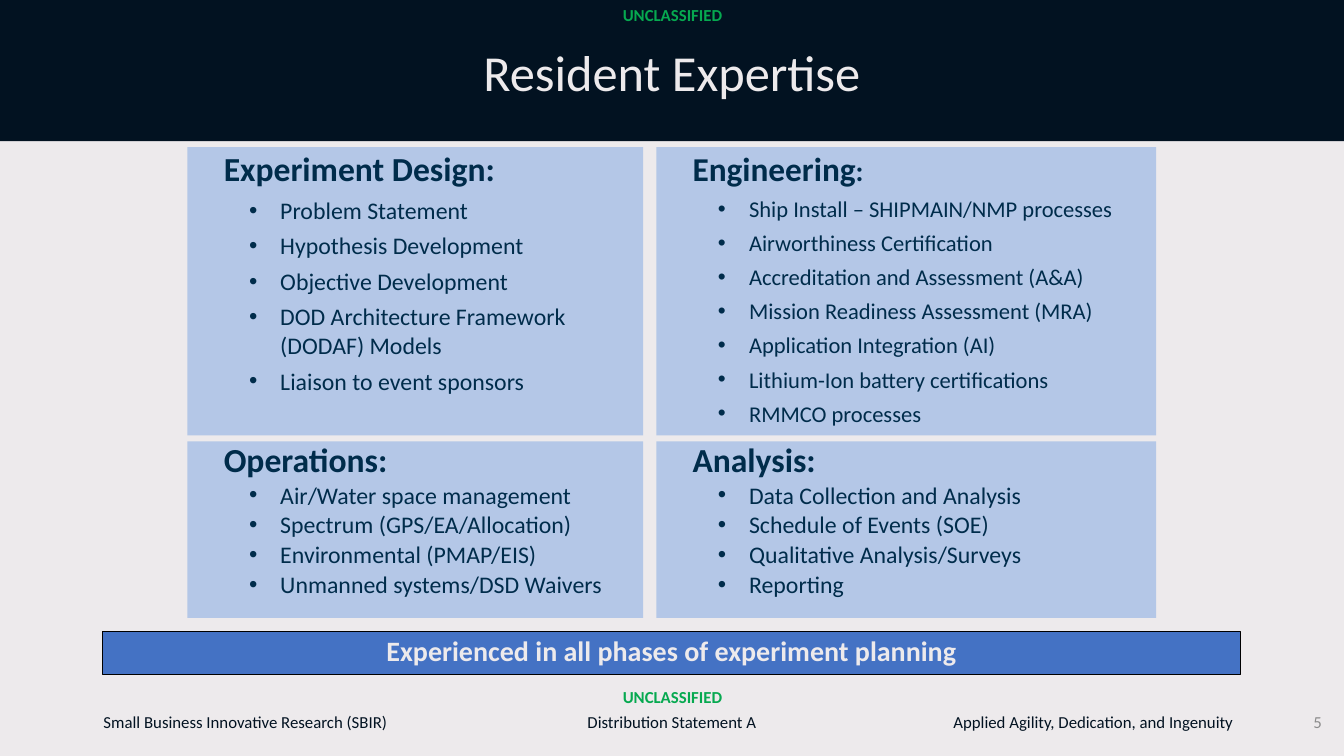
from lxml.etree import SubElement
from pptx import Presentation
from pptx.dml.color import RGBColor
from pptx.enum.shapes import MSO_SHAPE
from pptx.enum.text import MSO_ANCHOR, MSO_AUTO_SIZE, PP_ALIGN
from pptx.oxml.ns import qn
from pptx.util import Inches, Pt

WIDE, HIGH = Inches(13.33), Inches(7.5)
NAVY, PALE, GREEN = "021221", "EDEAEC", "06A950"
INK, PANEL, BLUE, GREY = "002C4B", "B4C7E7", "4472C4", "8C8C8C"
COLS = [(13.95, 33.9), (48.83, 37.2)]
ROWS = [(19.47, 38.13), (58.4, 23.33)]
LISTS = [
    ("Experiment Design:", [
        "Problem Statement",
        "Hypothesis Development",
        "Objective Development",
        "DOD Architecture Framework (DODAF) Models",
        "Liaison to event sponsors"]),
    ("Engineering:", [
        "Ship Install – SHIPMAIN/NMP processes",
        "Airworthiness Certification",
        "Accreditation and Assessment (A&A)",
        "Mission Readiness Assessment (MRA)",
        "Application Integration (AI)",
        "Lithium-Ion battery certifications",
        "RMMCO processes"]),
    ("Operations:", [
        "Air/Water space management",
        "Spectrum (GPS/EA/Allocation)",
        "Environmental (PMAP/EIS)",
        "Unmanned systems/DSD Waivers"]),
    ("Analysis:", [
        "Data Collection and Analysis",
        "Schedule of Events (SOE)",
        "Qualitative Analysis/Surveys",
        "Reporting"]),
]
NOTES = [
    ("UNCLASSIFIED", 31.96, 0, 36.16, GREEN, True, PP_ALIGN.CENTER),
    ("UNCLASSIFIED", 31.96, 90.13, 36.16, GREEN, True, PP_ALIGN.CENTER),
    ("Small Business Innovative Research (SBIR)", 2.7, 93.47, 31.13, NAVY, False, PP_ALIGN.CENTER),
    ("Distribution Statement A", 33.08, 93.47, 33.83, NAVY, False, PP_ALIGN.CENTER),
    ("Applied Agility, Dedication, and Ingenuity", 65.49, 93.47, 31.73, NAVY, False, PP_ALIGN.CENTER),
    ("5", 90.02, 93.47, 9.08, GREY, False, PP_ALIGN.RIGHT),
]


def area(x, y, w, h):
    return [round(part * size / 100) for part, size in zip((x, y, w, h), (WIDE, HIGH) * 2)]


def place(shape, box):
    shape.left, shape.top, shape.width, shape.height = area(*box)


def paint(fill, color):
    fill.solid()
    fill.fore_color.rgb = RGBColor.from_string(color)


def style(para, size, color, bold=False):
    font = para.font
    font.name, font.size, font.bold = "Calibri", Pt(size), bold
    font.color.rgb = RGBColor.from_string(color)


def bullet(para, mark):
    props = para._p.get_or_add_pPr()
    left, hang = (0.82, -0.31) if mark else (0.26, 0)
    props.set("marL", str(Inches(left)))
    props.set("indent", str(Inches(hang)))
    if mark:
        SubElement(props, qn("a:buFont"), typeface="Arial")
        SubElement(props, qn("a:buChar"), char="•")
    else:
        SubElement(props, qn("a:buNone"))


def block(slide, box, color):
    shape = slide.shapes.add_shape(MSO_SHAPE.RECTANGLE, *area(*box))
    shape.shadow.inherit = False
    paint(shape.fill, color)
    shape.line.fill.background()
    return shape


def label(frame, text, size, color, bold=False, align=PP_ALIGN.CENTER, anchor=MSO_ANCHOR.MIDDLE):
    frame.word_wrap = True
    frame.auto_size = MSO_AUTO_SIZE.NONE
    frame.vertical_anchor = anchor
    para = frame.paragraphs[0]
    para.text, para.alignment = text, align
    style(para, size, color, bold)
    return para


def panel(shape, box, head, items, sizes, tight):
    place(shape, box)
    paint(shape.fill, PANEL)
    frame = shape.text_frame
    para = label(frame, head, sizes[0], INK, True, PP_ALIGN.LEFT, MSO_ANCHOR.TOP)
    bullet(para, False)
    para.line_spacing, para.space_before = 0.8 if tight else 0.9, Pt(0)
    for item in items:
        para = frame.add_paragraph()
        para.text, para.level = item, 1
        bullet(para, True)
        para.line_spacing, para.space_before = 0.8 if tight else 1.0, Pt(5)
        style(para, sizes[1], INK)


def main():
    deck = Presentation()
    deck.slide_width, deck.slide_height = WIDE, HIGH
    slide = deck.slides.add_slide(deck.slide_layouts[4])
    paint(slide.background.fill, PALE)
    band = block(slide, (0, 0, 100, 18.67), NAVY)
    slide.shapes._spTree.insert(2, band._element)

    title, *bodies = slide.placeholders
    place(title, (25.43, 4.4, 49.14, 11.2))
    para = label(title.text_frame, "Resident Expertise", 36, PALE)
    para.line_spacing = 0.9

    for spot, (body, (head, items)) in enumerate(zip(bodies, LISTS)):
        (y, h), (x, w) = ROWS[spot // 2], COLS[spot % 2]
        sizes = (23.8, 16.1) if head == "Engineering:" else (24, 17)
        panel(body, (x, y, w, h), head, items, sizes, spot > 1)
        if head == "Engineering:":
            first = body.text_frame.paragraphs[0]
            first.runs[0].text = head[:-1]
            colon = first.add_run()
            colon.text, colon.font.size = ":", Pt(20.4)

    bar = block(slide, (7.65, 83.6, 84.62, 5.67), BLUE)
    paint(bar.line.fill, "000000")
    bar.line.width = Pt(0.75)
    para = label(bar.text_frame, "Experienced in all phases of experiment planning",
                 20, PALE, True, anchor=MSO_ANCHOR.TOP)
    para.line_spacing = 0.9

    for text, x, y, w, color, bold, align in NOTES:
        note = slide.shapes.add_textbox(*area(x, y, w, 4))
        label(note.text_frame, text, 12, color, bold, align)
    deck.save("out.pptx")


if __name__ == "__main__":
    main()
